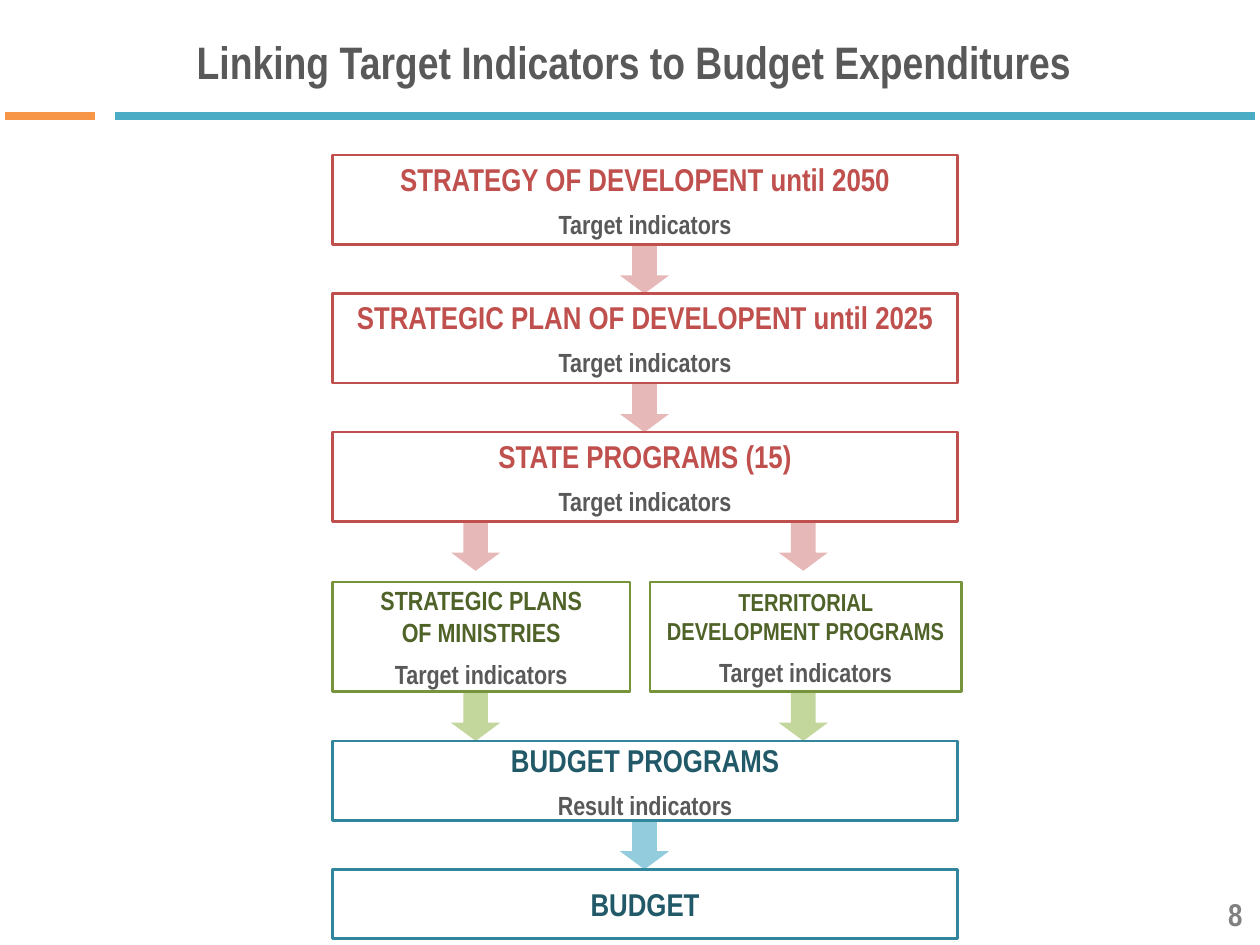
from dataclasses import dataclass

from lxml.etree import SubElement
from pptx import Presentation
from pptx.dml.color import RGBColor
from pptx.enum.shapes import MSO_CONNECTOR as CONN, MSO_SHAPE as SHAPE
from pptx.enum.text import MSO_ANCHOR as ANCHOR, MSO_AUTO_SIZE as AUTO, PP_ALIGN as ALIGN
from pptx.oxml.ns import qn
from pptx.util import Inches, Pt


@dataclass(frozen=True)
class Theme:
    font: str = "Arial Narrow"
    grey: str = "595959"
    number: str = "808080"
    teal: str = "4BACC6"
    orange: str = "F79646"
    # outline, heading, arrow
    red: tuple = ("C0504D", "C0504D", "E6B9B8")
    green: tuple = ("77933C", "4F6228", "C3D69B")
    blue: tuple = ("31859C", "215968", "93CDDD")
    title: int = 26
    heading: int = 18
    label: int = 15
    small: int = 14


T = Theme()


def rgb(value):
    return RGBColor.from_string(value)


def write(shape, lines, align=ALIGN.CENTER, inset=0.0):
    """Fill a shape with lines of (text, size, colour, space after)."""
    tf = shape.text_frame
    tf.word_wrap = True
    tf.auto_size = AUTO.NONE
    tf.vertical_anchor = ANCHOR.MIDDLE
    tf.margin_top = tf.margin_bottom = Inches(inset)
    for i, (text, size, color, after) in enumerate(lines):
        p = tf.add_paragraph() if i else tf.paragraphs[0]
        p.alignment = align
        p.space_before, p.space_after = Pt(0), Pt(after)
        r = p.add_run()
        r.text = text
        r.font.name, r.font.size, r.font.bold = T.font, Pt(size), True
        r.font.color.rgb = rgb(color)


prs = Presentation()
prs.slide_width, prs.slide_height = Inches(10), Inches(7.5)
s = prs.slides.add_slide(prs.slide_layouts[5])

# Title, slide number and the two-coloured rule
title = s.shapes.title
title.left, title.top, title.width, title.height = map(Inches, (0.35, 0.14, 9.37, 0.69))
write(title, [("Linking Target Indicators to Budget Expenditures", T.title, T.grey, 6)], inset=0.05)

number = s.shapes.add_textbox(*map(Inches, (7.63, 7.05, 2.33, 0.4)))
write(number, [("8", T.heading, T.number, 0)], ALIGN.RIGHT, 0.05)

for x1, x2, color in ((0.91, 9.96, T.teal), (0.04, 0.75, T.orange)):
    rule = s.shapes.add_connector(CONN.STRAIGHT, *map(Inches, (x1, 0.92, x2, 0.92)))
    rule.line.color.rgb = rgb(color)
    rule.line.width = Pt(4.5)
    SubElement(rule._element.spPr, qn("a:effectLst"))

# Flow chart grid: columns are (left, width), arrows sit on centre lines
FULL, LEFT, RIGHT = (2.64, 4.96), (2.64, 2.36), (5.16, 2.47)
MIDDLE, SIDES = (5.115,), (3.775, 6.375)
ARROW, TOP = 0.39, 1.23
TARGET = ("Target indicators", T.label, T.grey, 0)
RESULT = ("Result indicators", T.label, T.grey, 0)

# height, palette, arrow centres, extra gap below, boxes of (column, headings, size, labels)
levels = [
    (0.71, T.red, MIDDLE, 0,
     [(FULL, ["STRATEGY OF DEVELOPENT until 2050"], T.heading, [TARGET])]),
    (0.71, T.red, MIDDLE, 0,
     [(FULL, ["STRATEGIC PLAN OF DEVELOPENT until 2025"], T.heading, [TARGET])]),
    (0.71, T.red, SIDES, 0.09,
     [(FULL, ["STATE PROGRAMS (15)"], T.heading, [TARGET])]),
    (0.87, T.green, SIDES, 0,
     [(LEFT, ["STRATEGIC PLANS", "OF MINISTRIES"], T.label, [TARGET]),
      (RIGHT, ["TERRITORIAL DEVELOPMENT PROGRAMS"], T.small, [TARGET])]),
    (0.63, T.blue, MIDDLE, 0,
     [(FULL, ["BUDGET PROGRAMS"], T.heading, [RESULT])]),
    (0.55, T.blue, (), 0,
     [(FULL, ["BUDGET"], T.heading, [])]),
]

y = TOP
for height, (outline, ink, arrow_fill), centres, extra, boxes in levels:
    for cx in centres:
        arrow = s.shapes.add_shape(
            SHAPE.RIGHT_ARROW, *map(Inches, (cx - ARROW / 2, y + height, ARROW, ARROW)))
        arrow.rotation = 90
        arrow.adjustments[0], arrow.adjustments[1] = 0.5, 0.37
        arrow.shadow.inherit = False
        arrow.fill.solid()
        arrow.fill.fore_color.rgb = rgb(arrow_fill)
        arrow.line.fill.background()
    for (left, width), headings, size, labels in boxes:
        box = s.shapes.add_shape(
            SHAPE.ROUNDED_RECTANGLE, *map(Inches, (left, y, width, height)))
        box.adjustments[0] = 0
        box.shadow.inherit = False
        box.fill.background()
        box.line.color.rgb = rgb(outline)
        box.line.width = Pt(1.5)
        lines = [(text, size, ink, 0) for text in headings[:-1]]
        lines.append((headings[-1], size, ink, 6))
        write(box, lines + labels)
    y += height + ARROW + extra

prs.save("out.pptx")
